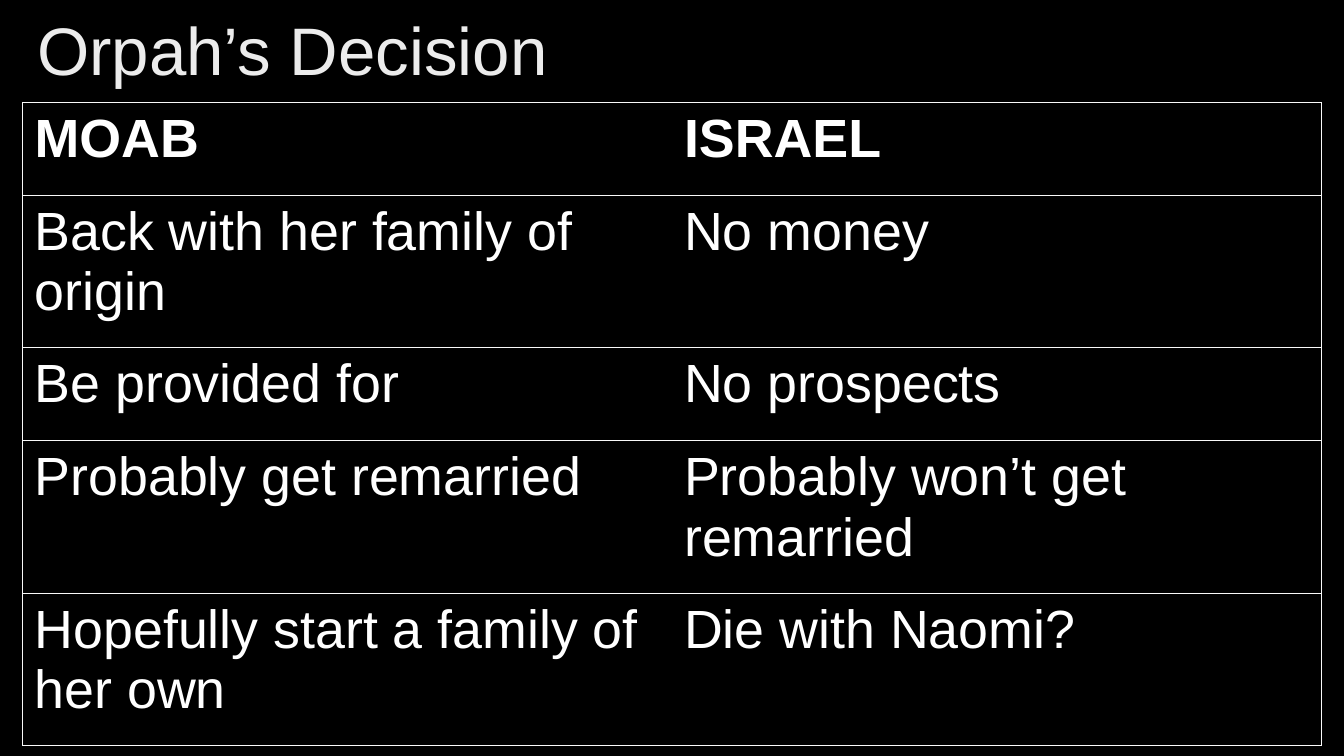
from lxml import etree
from pptx import Presentation
from pptx.dml.color import RGBColor
from pptx.enum import text
from pptx.oxml import ns
from pptx.util import Pt

HUES = {"back": "000000", "title": "ECECEC", "body": "FFFFFF", "rule": "F9F9F9"}
FACE = "Arial"
ROWS = [
    ("MOAB", "ISRAEL"),
    ("Back with her family of origin", "No money"),
    ("Be provided for", "No prospects"),
    ("Probably get remarried", "Probably won’t get remarried"),
    ("Hopefully start a family of her own", "Die with Naomi?"),
]
SHORT, TALL = 55.4, 90.7
HEIGHTS = [SHORT, TALL, SHORT, TALL, TALL]


def hue(name):
    return RGBColor.from_string(HUES[name])


def style(para, size, name, bold=False):
    font = para.font
    font.name, font.size, font.bold = FACE, Pt(size), bold
    font.color.rgb = hue(name)
    para.alignment = text.PP_ALIGN.LEFT


def edge(cell, sides):
    """Rule the named sides of a cell and clear the others."""
    props = cell._tc.get_or_add_tcPr()
    for spot, side in enumerate("LRTB"):
        line = etree.Element(ns.qn(f"a:ln{side}"), w=str(Pt(0.75)))
        if side in sides:
            fill = etree.SubElement(line, ns.qn("a:solidFill"))
            etree.SubElement(fill, ns.qn("a:srgbClr"), val=HUES["rule"])
        else:
            etree.SubElement(line, ns.qn("a:noFill"))
        props.insert(spot, line)


def add_title(slide, words, left, top, width, height):
    title = slide.shapes.title
    title.left, title.top = Pt(left), Pt(top)
    title.width, title.height = Pt(width), Pt(height)
    frame = title.text_frame
    frame.text = words
    frame.word_wrap = True
    frame.auto_size = text.MSO_AUTO_SIZE.NONE
    frame.vertical_anchor = text.MSO_ANCHOR.TOP
    style(frame.paragraphs[0], 40, "title")


def add_grid(slide, left, top, width):
    count = len(ROWS[0])
    grid = slide.shapes.add_table(
        len(ROWS), count, Pt(left), Pt(top), Pt(width), Pt(sum(HEIGHTS))
    ).table
    for col in grid.columns:
        col.width = Pt(width / count)
    for r, (words, height) in enumerate(zip(ROWS, HEIGHTS)):
        grid.rows[r].height = Pt(height)
        for c, word in enumerate(words):
            cell = grid.cell(r, c)
            cell.text = word
            cell.fill.solid()
            cell.fill.fore_color.rgb = hue("back")
            style(cell.text_frame.paragraphs[0], 32, "body", bold=r == 0)
            edge(cell, "LTB" if c == 0 else "RTB")


def main():
    deck = Presentation()
    deck.slide_width, deck.slide_height = Pt(800), Pt(450)
    slide = deck.slides.add_slide(deck.slide_layouts.get_by_name("Title Only"))
    slide.background.fill.solid()
    slide.background.fill.fore_color.rgb = hue("back")
    add_grid(slide, 13.4, 61, 773.2)
    add_title(slide, "Orpah’s Decision", 15, 1.5, 372, 55.5)
    deck.save("out.pptx")


if __name__ == "__main__":
    main()
